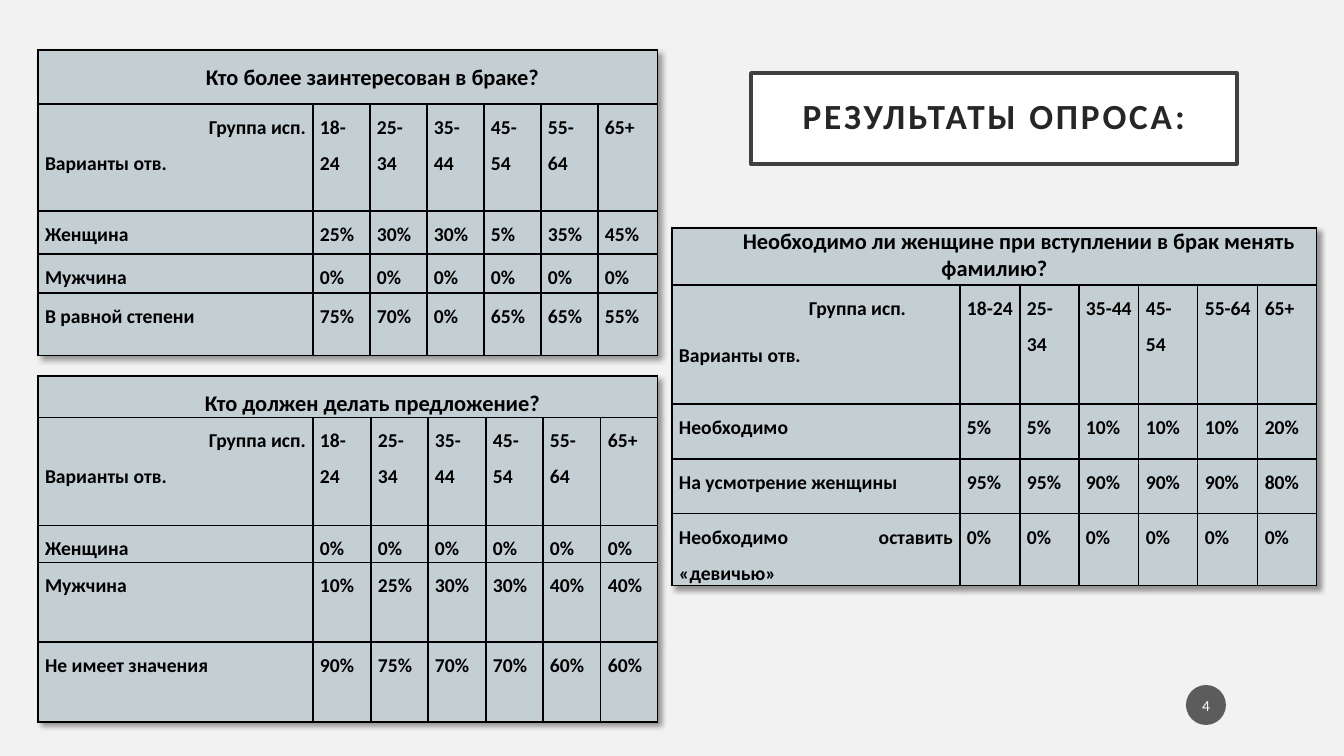
from dataclasses import dataclass
from typing import Any

from lxml import etree
from pptx import Presentation
from pptx import util as u
from pptx.dml.color import RGBColor
from pptx.enum import shapes, text
from pptx.oxml import ns

SCALE = 12192000 / 1344
AGES = ("18-24", "25-34", "35-44", "45-54", "55-64", "65+")
ALIGN = text.PP_ALIGN


@dataclass(frozen=True)
class Theme:
    font: str = "Calibri"
    back: str = "F2F2F2"
    cell: str = "C3CFD3"
    ink: str = "000000"
    white: str = "FFFFFF"
    frame: str = "404040"
    title: str = "262626"
    badge: str = "1D1D1D"
    head_size: float = 16
    cell_size: float = 14
    title_size: float = 25.2
    badge_size: float = 11


@dataclass(frozen=True)
class Para:
    words: str
    size: float
    color: str
    align: Any = ALIGN.JUSTIFY
    space: float = 1.5
    after: int = 8
    indent: int = 0
    bold: bool = True
    track: int = 0


@dataclass(frozen=True)
class Poll:
    left: int
    top: int
    cols: tuple[int, ...]
    rows: tuple[int, ...]
    head: Para
    group: Para
    votes: dict[str, str]


@dataclass(frozen=True)
class Label:
    kind: Any
    box: tuple[int, int, int, int]
    fill: str
    para: Para
    pads: tuple[int, int]
    line: str = ""
    alpha: int = 100


THEME = Theme()


def px(size: int) -> int:
    return round(size * SCALE)


def put(item: Any, values: dict[str, Any]) -> None:
    for name, value in values.items():
        setattr(item, name, value)


def paint(fill: Any, color: str) -> None:
    fill.solid()
    fill.fore_color.rgb = RGBColor.from_string(color)


def node(host: Any, tag: str, **attrs: str) -> Any:
    return etree.SubElement(host, ns.qn(tag), attrs)


def write(frame: Any, paras: list[Para]) -> None:
    for spot, para in enumerate(paras):
        line = frame.add_paragraph() if spot else frame.paragraphs[0]
        put(line, {"alignment": para.align, "line_spacing": para.space,
                   "space_after": u.Pt(para.after)})
        if para.indent:
            props = line._p.get_or_add_pPr()
            props.set("marL", "0")
            props.set("indent", str(px(para.indent)))
        run = line.add_run()
        run.text = para.words
        put(run.font, {"name": THEME.font, "size": u.Pt(para.size), "bold": para.bold})
        run.font.color.rgb = RGBColor.from_string(para.color)
        if para.track:
            run._r.get_or_add_rPr().set("spc", str(para.track))


def edge(cell: Any) -> None:
    props = cell._tc.get_or_add_tcPr()
    for side in ("L", "R", "T", "B"):
        line = node(props, f"a:ln{side}", w=str(u.Pt(1)))
        node(node(line, "a:solidFill"), "a:srgbClr", val=THEME.ink)


def shade(table: Any) -> None:
    props = table._tbl.tblPr
    list_ = node(props, "a:effectLst")
    props.insert(0, list_)
    cast = node(list_, "a:outerShdw", blurRad="50800", dist="38100",
                dir="2700000", algn="tl", rotWithShape="0")
    node(node(cast, "a:srgbClr", val=THEME.ink), "a:alpha", val="40000")


def plain(words: str) -> list[Para]:
    return [Para(words, THEME.cell_size, THEME.ink)]


def draw_poll(slide: Any, poll: Poll) -> None:
    table = slide.shapes.add_table(
        len(poll.rows), len(poll.cols), px(poll.left), px(poll.top),
        px(sum(poll.cols)), px(sum(poll.rows))).table
    put(table, {"first_row": False, "horz_banding": False})
    shade(table)
    for col, width in zip(table.columns, poll.cols):
        col.width = px(width)
    for row, height in zip(table.rows, poll.rows):
        row.height = px(height)
    for cell in table.iter_cells():
        put(cell, {"margin_left": px(7), "margin_right": px(7),
                   "margin_top": 0, "margin_bottom": 0})
        edge(cell)
        paint(cell.fill, THEME.cell)
    table.cell(0, 0).merge(table.cell(0, len(poll.cols) - 1))
    write(table.cell(0, 0).text_frame, [poll.head])
    write(table.cell(1, 0).text_frame, [poll.group, *plain("Варианты отв.")])
    for col, age in enumerate(AGES, 1):
        write(table.cell(1, col).text_frame, plain(age))
    for row, (name, votes) in enumerate(poll.votes.items(), 2):
        write(table.cell(row, 0).text_frame, plain(name))
        for col, vote in enumerate(votes.split(), 1):
            write(table.cell(row, col).text_frame, plain(f"{vote}%"))


def draw_label(slide: Any, label: Label) -> None:
    shape = slide.shapes.add_shape(label.kind, *map(px, label.box))
    shape.shadow.inherit = False
    paint(shape.fill, label.fill)
    if label.alpha < 100:
        color = shape._element.spPr.find(".//" + ns.qn("a:srgbClr"))
        node(color, "a:alpha", val=str(label.alpha * 1000))
    if label.line:
        paint(shape.line.fill, label.line)
        shape.line.width = u.Pt(2.5)
    else:
        shape.line.fill.background()
    wide, high = map(px, label.pads)
    put(shape.text_frame, {"margin_left": wide, "margin_right": wide,
                           "margin_top": high, "margin_bottom": high, "word_wrap": True,
                           "vertical_anchor": text.MSO_ANCHOR.MIDDLE})
    write(shape.text_frame, [label.para])


def head(words: str, space: float = 1.5) -> Para:
    return Para(words, THEME.head_size, THEME.ink, ALIGN.CENTER, space, indent=49)


def group(align: Any, after: int, indent: int = 0) -> Para:
    return Para("Группа исп.", THEME.cell_size, THEME.ink, align, after=after, indent=indent)


POLLS = (
    Poll(38, 50, (275, *(57,) * 5, 60), (54, 107, 43, 39, 63),
         head("Кто более заинтересован в браке?"), group(ALIGN.RIGHT, 0),
         {"Женщина": "25 30 30 5 35 45", "Мужчина": "0 0 0 0 0 0",
          "В равной степени": "75 70 0 65 65 55"}),
    Poll(38, 376, (275, *(58, 57) * 3), (41, 108, 37, 80, 80),
         head("Кто должен делать предложение?"), group(ALIGN.RIGHT, 0),
         {"Женщина": "0 0 0 0 0 0", "Мужчина": "10 25 30 30 40 40",
          "Не имеет значения": "90 75 70 70 60 60"}),
    Poll(672, 228, (288, *(60, 59) * 3), (57, 119, 55, 55, 71),
         head("Необходимо ли женщине при вступлении в брак менять фамилию?", 1.0),
         group(ALIGN.LEFT, 8, 130),
         {"Необходимо": "5 5 10 10 10 20", "На усмотрение женщины": "95 95 90 90 90 80",
          "Необходимо оставить «девичью»": "0 0 0 0 0 0"}),
)
LABELS = (
    Label(shapes.MSO_SHAPE.RECTANGLE, (751, 73, 486, 91), THEME.white,
          Para("РЕЗУЛЬТАТЫ ОПРОСА:", THEME.title_size, THEME.title, ALIGN.CENTER,
               0.9, 0, track=200), (20, 20), THEME.frame),
    Label(shapes.MSO_SHAPE.OVAL, (1186, 685, 40, 40), THEME.badge,
          Para("4", THEME.badge_size, THEME.white, ALIGN.CENTER, 1.0, 0, bold=False),
          (2, 5), alpha=70),
)


def main() -> None:
    deck = Presentation()
    put(deck, {"slide_width": px(1344), "slide_height": px(756)})
    slide = deck.slides.add_slide(deck.slide_layouts[6])
    paint(slide.background.fill, THEME.back)
    for poll in POLLS:
        draw_poll(slide, poll)
    for label in LABELS:
        draw_label(slide, label)
    deck.save("out.pptx")


if __name__ == "__main__":
    main()
